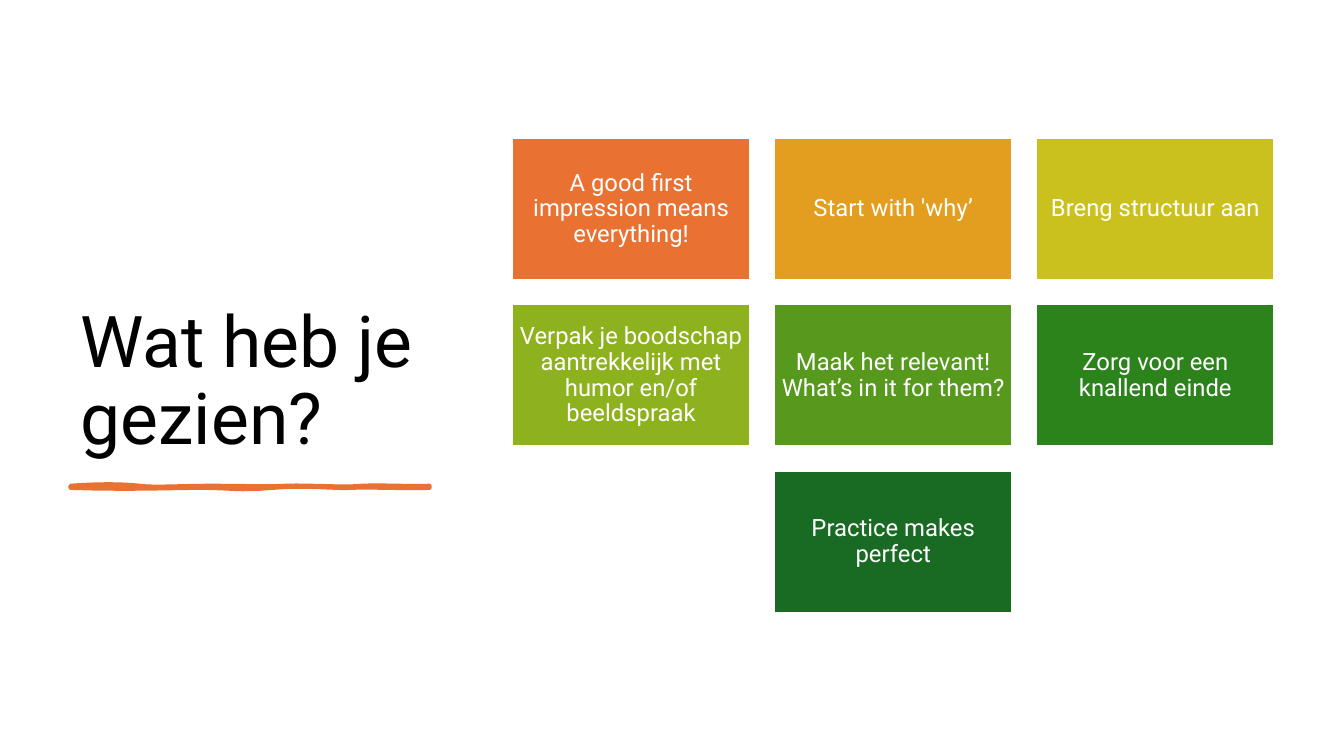
from pptx import Presentation
from pptx.dml.color import RGBColor
from pptx.enum.shapes import MSO_SHAPE
from pptx.enum.text import MSO_ANCHOR, MSO_AUTO_SIZE, PP_ALIGN
from pptx.util import Inches, Pt

RECTANGLE = MSO_SHAPE.RECTANGLE
LEFT, CENTER = PP_ALIGN.LEFT, PP_ALIGN.CENTER
BOTTOM, MIDDLE = MSO_ANCHOR.BOTTOM, MSO_ANCHOR.MIDDLE
NO_AUTOFIT = MSO_AUTO_SIZE.NONE

FONT = "Roboto"
COLORS = {"title": "000000", "white": "FFFFFF", "stroke": "E97132"}
TITLE = "Wat heb je gezien?"
# Text, fill, column, row
CARDS = [
    ("A good first impression means everything!", "E97132", 0, 0),
    ("Start with 'why’", "E39D1F", 1, 0),
    ("Breng structuur aan", "CBC11E", 2, 0),
    ("Verpak je boodschap aantrekkelijk met humor en/of beeldspraak", "8EB21E", 0, 1),
    ("Maak het relevant! What’s in it for them?", "56991D", 1, 1),
    ("Zorg voor een knallend einde", "2C821B", 2, 1),
    ("Practice makes perfect", "196B24", 1, 2),
]
GRID_LEFT, GRID_TOP = 5.08, 1.37
CARD_WIDTH, CARD_HEIGHT, GAP = 2.36, 1.41, 0.24

# Each edge: a start point, then two control points and an end point per curve
STROKE_TOP = [
    (0.7, 4.82), (0.97, 4.8), (1.21, 4.8), (1.38, 4.82),
    (1.55, 4.84), (1.77, 4.82), (2.09, 4.82), (2.41, 4.82), (2.6, 4.83), (2.84, 4.82),
    (3.08, 4.81), (3.39, 4.84), (3.59, 4.82), (3.79, 4.81), (4.12, 4.83), (4.26, 4.82),
]
STROKE_BOTTOM = [
    (4.26, 4.84), (4.08, 4.85), (3.64, 4.83), (3.48, 4.84),
    (3.32, 4.85), (3.04, 4.81), (2.7, 4.84), (2.35, 4.87), (2.31, 4.84), (1.99, 4.84),
    (1.66, 4.84), (1.32, 4.86), (0.7, 4.84),
]
CURVE_STEPS = 8


def rgb(value):
    return RGBColor.from_string(value)


def write_text(shape, text, size, color, alignment, anchor):
    frame = shape.text_frame
    frame.text = text
    frame.word_wrap = True
    frame.auto_size = NO_AUTOFIT
    frame.vertical_anchor = anchor
    paragraph = frame.paragraphs[0]
    paragraph.alignment = alignment
    paragraph.line_spacing = 0.9
    font = paragraph.runs[0].font
    font.name, font.size = FONT, Pt(size)
    font.color.rgb = rgb(color)
    return frame


def sample_curves(points):
    """Turn a chain of cubic curves into points in slide units."""
    samples = [points[0]]
    for start in range(0, len(points) - 1, 3):
        a, b, c, d = points[start:start + 4]
        for step in range(1, CURVE_STEPS + 1):
            t = step / CURVE_STEPS
            weights = ((1 - t) ** 3, 3 * t * (1 - t) ** 2, 3 * t * t * (1 - t), t ** 3)
            samples.append(tuple(
                sum(w * p[axis] for w, p in zip(weights, (a, b, c, d)))
                for axis in (0, 1)))
    return [(Inches(x), Inches(y)) for x, y in samples]


def add_title(slide):
    title = slide.shapes.title
    title.left, title.top = Inches(0.7), Inches(0.7)
    title.width, title.height = Inches(3.91), Inches(3.91)
    write_text(title, TITLE, 51, COLORS["title"], LEFT, BOTTOM)


def add_brush_stroke(slide):
    outline = sample_curves(STROKE_TOP) + sample_curves(STROKE_BOTTOM)
    builder = slide.shapes.build_freeform(*outline[0])
    builder.add_line_segments(outline[1:], close=True)
    stroke = builder.convert_to_shape()
    stroke.shadow.inherit = False
    stroke.fill.solid()
    stroke.fill.fore_color.rgb = rgb(COLORS["stroke"])
    stroke.line.color.rgb = rgb(COLORS["stroke"])
    stroke.line.width = Pt(3)


def add_card(slide, text, fill, column, row):
    card = slide.shapes.add_shape(
        RECTANGLE,
        Inches(GRID_LEFT + column * (CARD_WIDTH + GAP)),
        Inches(GRID_TOP + row * (CARD_HEIGHT + GAP)),
        Inches(CARD_WIDTH), Inches(CARD_HEIGHT))
    card.shadow.inherit = False
    card.fill.solid()
    card.fill.fore_color.rgb = rgb(fill)
    card.line.color.rgb = rgb(COLORS["white"])
    card.line.width = Pt(1.5)
    frame = write_text(card, text, 17, COLORS["white"], CENTER, MIDDLE)
    frame.margin_left = frame.margin_right = Inches(0.07)
    frame.margin_top = frame.margin_bottom = Inches(0.07)


def main():
    presentation = Presentation()
    presentation.slide_width = Inches(13.33)
    presentation.slide_height = Inches(7.5)
    title_only = presentation.slide_layouts[5]
    slide = presentation.slides.add_slide(title_only)
    add_title(slide)
    add_brush_stroke(slide)
    for card in CARDS:
        add_card(slide, *card)
    presentation.save("out.pptx")


if __name__ == "__main__":
    main()
